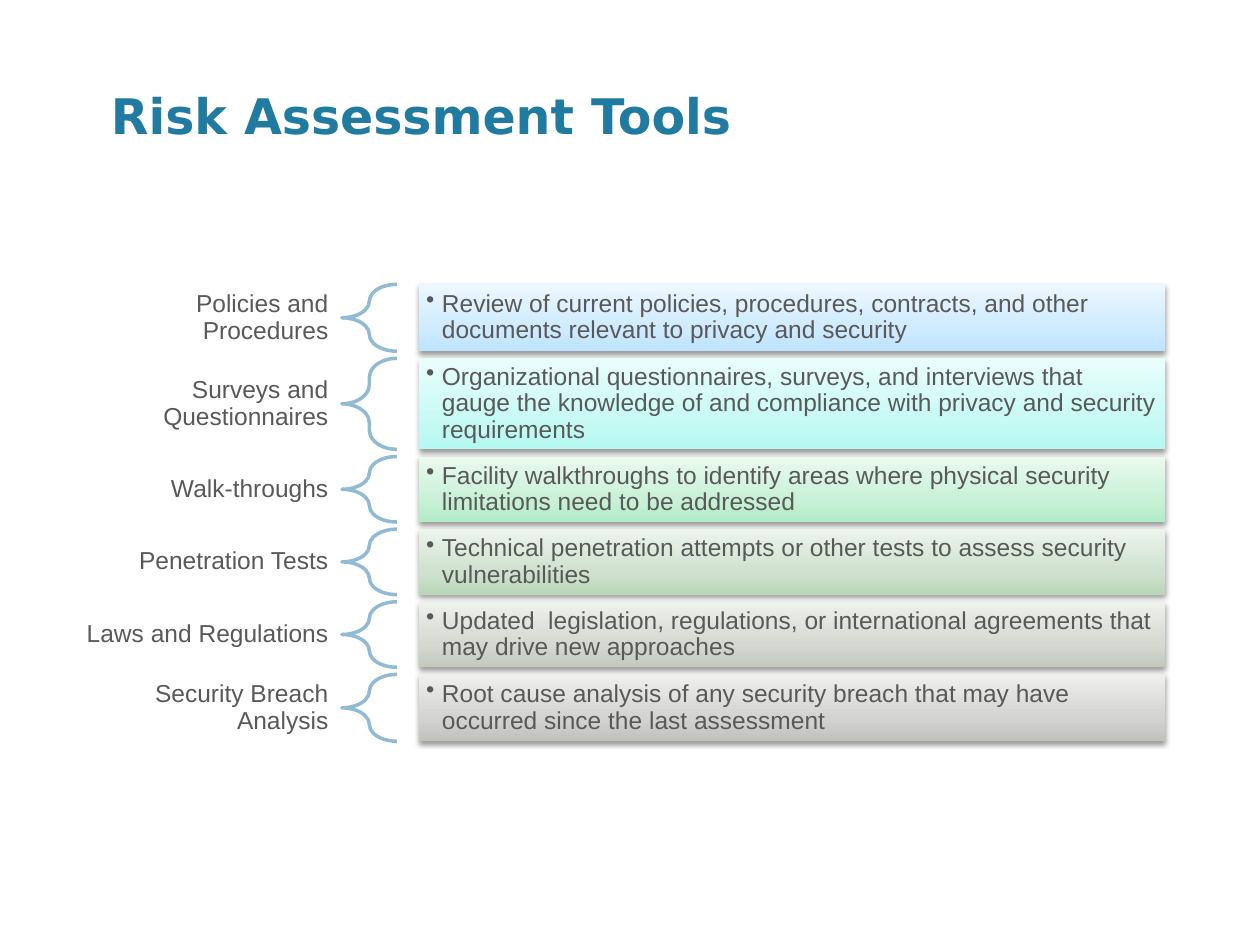
from dataclasses import dataclass

import pptx
import pptx.dml.color
import pptx.enum.shapes
import pptx.enum.text
import pptx.oxml
import pptx.oxml.ns
import pptx.util

Pt = pptx.util.Pt
SHAPE = pptx.enum.shapes.MSO_SHAPE
ALIGN = pptx.enum.text.PP_ALIGN
ANCHOR = pptx.enum.text.MSO_ANCHOR
NAMESPACE = pptx.oxml.ns.nsdecls("a")

TEXT_COLOR = "595959"
BRACE_COLOR = "91BAD3"
TITLE_COLOR = "217AA0"

# Columns and rows, in points
LABEL_LEFT, LABEL_WIDTH = 38.8, 156.8
BRACE_LEFT, BRACE_WIDTH = 195.4, 31.4
BAND_LEFT, BAND_WIDTH = 239.3, 426.3
FIRST_TOP, ROW_GAP = 162.5, 4.1


@dataclass
class Tool:
    label: str
    label_height: float
    description: str
    height: float
    gradient: tuple[str, str, str]  # from bottom to top


TOOLS = [
    Tool("Policies and Procedures", 34.5,
         "Review of current policies, procedures, contracts, and other documents "
         "relevant to privacy and security",
         38.2, ("BDE3FF", "CFEBFF", "EDF7FF")),
    Tool("Surveys and Questionnaires", 34.5,
         "Organizational questionnaires, surveys, and interviews that gauge the "
         "knowledge of and compliance with privacy and security requirements",
         52, ("B3F9F1", "C9FAF4", "E9FEFC")),
    Tool("Walk-throughs", 21.6,
         "Facility walkthroughs to identify areas where physical security "
         "limitations need to be addressed",
         37.4, ("B2ECC6", "C9F1D7", "EAFAEF")),
    Tool("Penetration Tests", 21.6,
         "Technical penetration attempts or other tests to assess security "
         "vulnerabilities",
         37.4, ("BAD7B9", "CFE2CE", "ECF4EC")),
    Tool("Laws and Regulations", 21.6,
         "Updated  legislation, regulations, or international agreements that may "
         "drive new approaches",
         37.4, ("C3C9BD", "D5D9D1", "EFF1ED")),
    Tool("Security Breach Analysis", 34.5,
         "Root cause analysis of any security breach that may have occurred since "
         "the last assessment",
         38.2, ("C1C1BE", "D3D3D2", "EFEFEE")),
]


def color(value: str) -> pptx.dml.color.RGBColor:
    return pptx.dml.color.RGBColor.from_string(value)


def apply(target, formats: dict) -> None:
    for name, value in formats.items():
        setattr(target, name, value)


def write(box, text: str, margins: tuple[float, float], align, bullet=False) -> None:
    """Fill a box with one paragraph; margins are horizontal and vertical."""
    side, edge = (Pt(margin) for margin in margins)
    frame = box.text_frame
    apply(frame, {"word_wrap": True, "vertical_anchor": ANCHOR.MIDDLE,
                  "margin_left": side, "margin_right": side,
                  "margin_top": edge, "margin_bottom": edge})
    para = frame.paragraphs[0]
    apply(para, {"alignment": align, "line_spacing": 0.9})
    if bullet:
        para.level = 1
        properties = para._p.get_or_add_pPr()
        properties.set("marL", str(Pt(9)))
        properties.set("indent", str(-Pt(9)))
        properties.append(pptx.oxml.parse_xml(f'<a:buChar {NAMESPACE} char="•"/>'))
    span = para.add_run()
    span.text = text
    apply(span.font, {"name": "Arial", "size": Pt(14)})
    span.font.color.rgb = color(TEXT_COLOR)


def add_label(page, tool: Tool, middle: float) -> None:
    box = page.shapes.add_textbox(Pt(LABEL_LEFT), Pt(middle - tool.label_height / 2),
                                  Pt(LABEL_WIDTH), Pt(tool.label_height))
    write(box, tool.label, (7.9, 2.9), ALIGN.RIGHT)


def add_brace(page, tool: Tool, top: float) -> None:
    brace = page.shapes.add_shape(SHAPE.LEFT_BRACE, Pt(BRACE_LEFT), Pt(top),
                                  Pt(BRACE_WIDTH), Pt(tool.height))
    brace.shadow.inherit = False
    brace.adjustments[0], brace.adjustments[1] = 0.35, 0.5
    brace.fill.background()
    brace.line.color.rgb = color(BRACE_COLOR)
    brace.line.width = Pt(2)


def add_band(page, tool: Tool, top: float) -> None:
    band = page.shapes.add_shape(SHAPE.RECTANGLE, Pt(BAND_LEFT), Pt(top),
                                 Pt(BAND_WIDTH), Pt(tool.height))
    band.line.fill.background()
    outline = band.line._ln
    # Three-stop gradient and soft drop shadow
    stops = "".join(f'<a:gs pos="{place}"><a:srgbClr val="{color(value)}"/></a:gs>'
                    for place, value in zip((0, 35000, 100000), tool.gradient))
    outline.addprevious(pptx.oxml.parse_xml(
        f'<a:gradFill {NAMESPACE} rotWithShape="1"><a:gsLst>{stops}</a:gsLst>'
        '<a:lin ang="16200000" scaled="0"/></a:gradFill>'))
    outline.addnext(pptx.oxml.parse_xml(
        f'<a:effectLst {NAMESPACE}><a:outerShdw blurRad="{Pt(3.1)}" dist="{Pt(1.6)}" '
        'dir="5400000" rotWithShape="0"><a:srgbClr val="000000">'
        '<a:alpha val="38000"/></a:srgbClr></a:outerShdw></a:effectLst>'))
    write(band, tool.description, (4.2, 4.2), ALIGN.LEFT, bullet=True)


def add_title(page, text: str) -> None:
    title = page.shapes.title
    apply(title, {"left": Pt(56.2), "top": Pt(45.4),
                  "width": Pt(627.8), "height": Pt(63.4)})
    title.text_frame.vertical_anchor = ANCHOR.TOP
    para = title.text_frame.paragraphs[0]
    para.alignment = ALIGN.LEFT
    span = para.add_run()
    span.text = text
    apply(span.font, {"name": "DejaVu Sans", "size": Pt(28), "bold": True})
    span.font.color.rgb = color(TITLE_COLOR)


def main() -> None:
    deck = pptx.Presentation()
    apply(deck, {"slide_width": Pt(720), "slide_height": Pt(540)})
    page = deck.slides.add_slide(deck.slide_layouts.get_by_name("Title Only"))
    add_title(page, "Risk Assessment Tools")

    # One row per tool: label, brace, description band
    top = FIRST_TOP
    for tool in TOOLS:
        add_label(page, tool, top + tool.height / 2)
        add_brace(page, tool, top)
        add_band(page, tool, top)
        top += tool.height + ROW_GAP

    deck.save("out.pptx")


if __name__ == "__main__":
    main()
